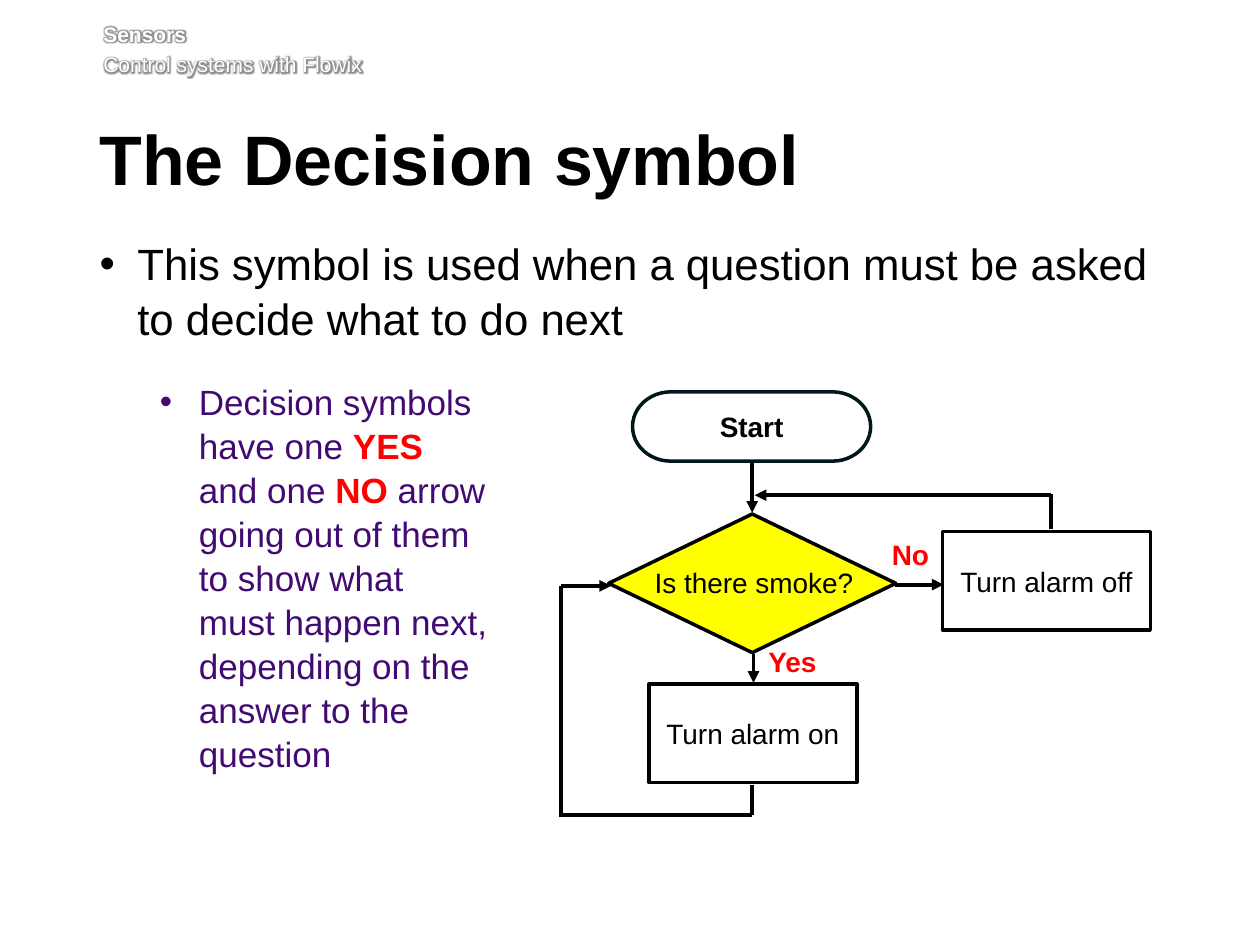
from lxml import etree
from pptx import Presentation
from pptx.dml.color import RGBColor
from pptx.enum.shapes import MSO_CONNECTOR as Link, MSO_SHAPE as Shape
from pptx.enum.text import MSO_ANCHOR as Anchor, MSO_AUTO_SIZE as Fit, PP_ALIGN as Align
from pptx.oxml import parse_xml
from pptx.oxml.ns import nsdecls, qn
from pptx.util import Inches, Pt

BLACK = RGBColor(0, 0, 0)
WHITE = RGBColor(255, 255, 255)
YELLOW = RGBColor(255, 255, 0)
RED = RGBColor(255, 0, 0)
PURPLE = RGBColor(0x42, 0x0B, 0x72)
DARK = RGBColor(0, 0x18, 0x1A)


def style(font, size, color=BLACK, bold=False):
    font.name = "Arial"
    font.size = Pt(size)
    font.bold = bold
    font.color.rgb = color


def bullet(para, left, hang):
    props = para._p.get_or_add_pPr()
    props.set("marL", str(Inches(left)))
    props.set("indent", str(-Inches(hang)))
    etree.SubElement(props, qn("a:buFont")).set("typeface", "Arial")
    etree.SubElement(props, qn("a:buChar")).set("char", "•")


deck = Presentation()
deck.slide_width, deck.slide_height = Inches(10), Inches(7.5)
slide = deck.slides.add_slide(deck.slide_layouts[1])
shapes = slide.shapes

head = shapes.add_textbox(Inches(0.82), Inches(0.17), Inches(8.82), Inches(0.49))
frame = head.text_frame
frame.word_wrap = True
frame.margin_left = frame.margin_top = frame.margin_right = 0
frame.text = "Sensors\nControl systems with Flowix"
for para, bold, gap in zip(frame.paragraphs, (True, False), (0, 2.9)):
    para.space_before = Pt(gap)
    font = para.runs[0].font
    style(font, 12, WHITE, bold)
    glow = parse_xml(
        f'<a:effectLst {nsdecls("a")}><a:glow rad="50800"><a:srgbClr val="000000">'
        '<a:alpha val="45000"/></a:srgbClr></a:glow></a:effectLst>')
    font._element.find(qn("a:solidFill")).addnext(glow)

title, body = shapes.title, slide.placeholders[1]
title.left, title.top, title.width, title.height = map(Inches, (0.79, 0.99, 8.55, 0.73))
body.left, body.top, body.width, body.height = map(Inches, (0.79, 1.86, 8.53, 3.78))
for box, top in ((title, 0.05), (body, 0)):
    frame = box.text_frame
    frame.auto_size = Fit.NONE
    frame.vertical_anchor = Anchor.TOP
    frame.margin_left, frame.margin_top = 0, Inches(top)

title.text_frame.text = "The Decision symbol"
para = title.text_frame.paragraphs[0]
para.alignment = Align.LEFT
para.line_spacing = Pt(39)
style(para.font, 40, BLACK, True)

body.text_frame.text = "This symbol is used when a question must be asked to decide what to do next"
para = body.text_frame.paragraphs[0]
bullet(para, 0.3, 0.3)
para.space_before = Pt(0)
para.line_spacing = 1.05
style(para.font, 25)

note = shapes.add_textbox(Inches(0.69), Inches(2.95), Inches(3.28), Inches(3.38))
note.text_frame.word_wrap = True
para = note.text_frame.paragraphs[0]
bullet(para, 0.79, 0.31)
para.line_spacing = 1.05
style(para.font, 20, PURPLE)
for text, key in (
    ("Decision symbols have one ", False),
    ("YES", True),
    (" and one ", False),
    ("NO", True),
    (" arrow going out of them to show what must happen next, "
     "depending on the answer to the question", False),
):
    run = para.add_run()
    run.text = text
    style(run.font, 20, RED if key else PURPLE, key)

for kind, text, x, y, w, h, fill, edge in (
    (Shape.FLOWCHART_DECISION, "", 4.83, 4.08, 2.28, 1.1, YELLOW, BLACK),
    (Shape.FLOWCHART_TERMINATOR, "Start", 5.02, 3.11, 1.89, 0.55, None, DARK),
    (Shape.RECTANGLE, "Turn alarm on", 5.15, 5.43, 1.65, 0.78, None, BLACK),
    (Shape.RECTANGLE, "Turn alarm off", 7.48, 4.22, 1.65, 0.78, None, BLACK),
):
    node = shapes.add_shape(kind, Inches(x), Inches(y), Inches(w), Inches(h))
    node.shadow.inherit = False
    if fill:
        node.fill.solid()
        node.fill.fore_color.rgb = fill
    else:
        node.fill.background()
    node.line.color.rgb = edge
    node.line.width = Pt(2)
    if text:
        node.text_frame.text = text
        node.text_frame.vertical_anchor = Anchor.MIDDLE
        para = node.text_frame.paragraphs[0]
        para.alignment = Align.CENTER
        style(para.font, 16, BLACK, text == "Start")

for x, y, far, low, tip in (
    (7.1, 4.64, 7.49, 4.64, True),
    (5.97, 3.67, 5.97, 4.07, True),
    (5.98, 5.19, 5.98, 5.42, True),
    (5.97, 6.23, 5.97, 6.47, False),
    (5.97, 6.47, 4.44, 6.47, False),
    (4.45, 6.45, 4.45, 4.65, False),
    (4.45, 4.65, 4.85, 4.65, True),
    (8.34, 4.2, 8.34, 3.92, False),
    (8.34, 3.93, 5.99, 3.93, True),
):
    wire = shapes.add_connector(Link.STRAIGHT, Inches(x), Inches(y), Inches(far), Inches(low))
    wire.line.color.rgb = BLACK
    wire.line.width = Pt(2.25)
    if tip:
        etree.SubElement(wire.line._get_or_add_ln(), qn("a:tailEnd")).set("type", "triangle")
    etree.SubElement(wire._element.spPr, qn("a:effectLst"))

for text, x, y, w, color in (
    ("Is there smoke?", 4.82, 4.44, 2.33, BLACK),
    ("Yes", 6, 5.07, 0.59, RED),
    ("No", 6.98, 4.22, 0.5, RED),
):
    label = shapes.add_textbox(Inches(x), Inches(y), Inches(w), Inches(0.37))
    label.text_frame.text = text
    label.text_frame.word_wrap = color == BLACK
    para = label.text_frame.paragraphs[0]
    para.alignment = Align.CENTER if color == BLACK else Align.LEFT
    style(para.font, 16, color, color == RED)

deck.save("out.pptx")
